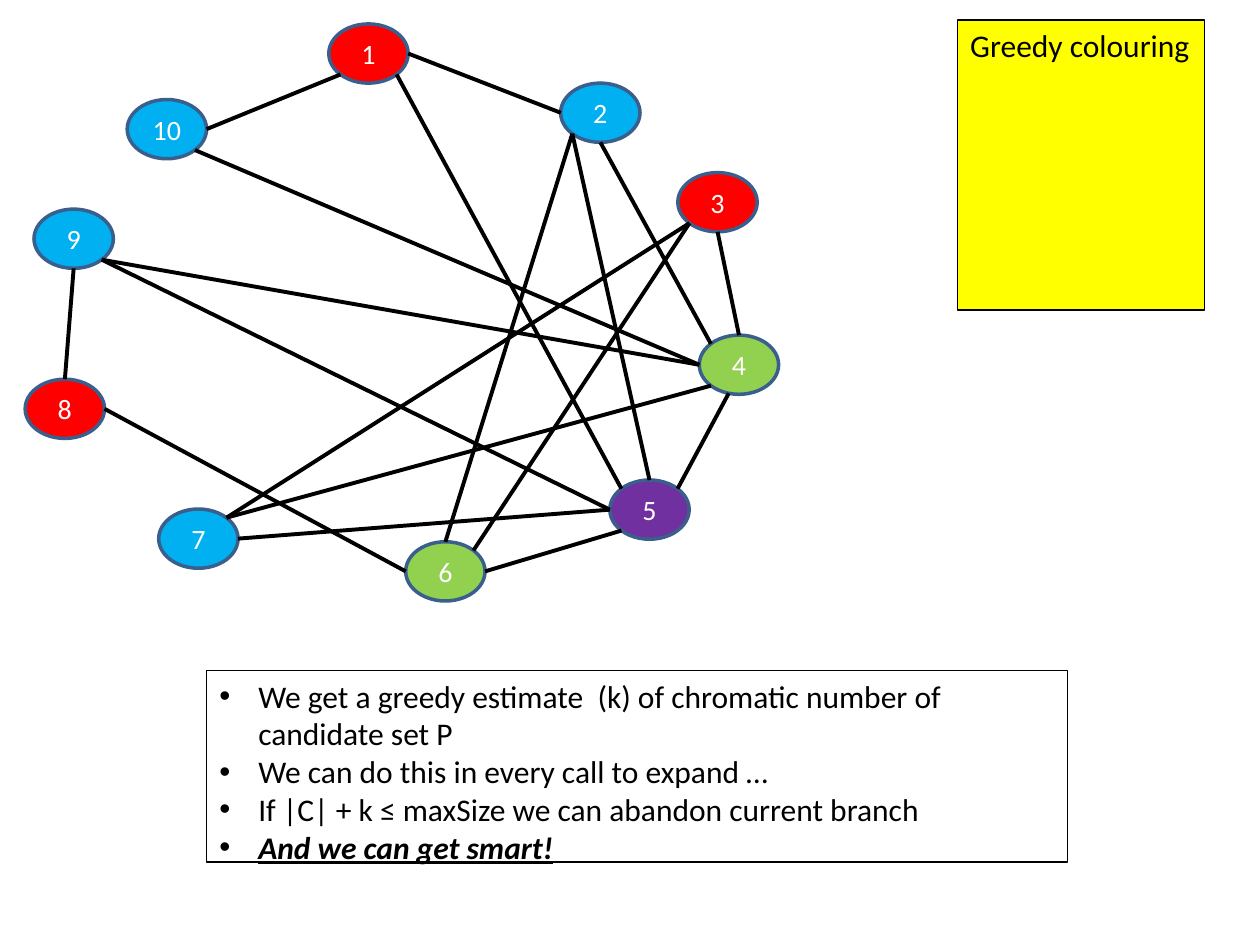
"""Build the greedy colouring slide: a coloured graph and its notes."""
from math import cos, radians, sin

from lxml import etree
from pptx import Presentation
from pptx.dml.color import RGBColor
from pptx.enum.shapes import MSO_CONNECTOR, MSO_SHAPE
from pptx.enum.text import MSO_ANCHOR, MSO_AUTO_SIZE, PP_ALIGN
from pptx.oxml.ns import qn
from pptx.util import Inches, Pt

OVAL = MSO_SHAPE.OVAL
STRAIGHT = MSO_CONNECTOR.STRAIGHT
TOP, MIDDLE = MSO_ANCHOR.TOP, MSO_ANCHOR.MIDDLE
LEFT, CENTER = PP_ALIGN.LEFT, PP_ALIGN.CENTER
FIT_SHAPE = MSO_AUTO_SIZE.SHAPE_TO_FIT_TEXT

RED, BLUE, GREEN, PURPLE = "FF0000", "00B0F0", "92D050", "7030A0"
BLACK, WHITE, YELLOW, OUTLINE = "000000", "FFFFFF", "FFFF00", "3A5F8C"
NODE_WIDTH, NODE_HEIGHT = 0.63, 0.47

NODES = {
    1: (2.61, 0.19, RED),
    2: (4.45, 0.66, BLUE),
    3: (5.38, 1.37, RED),
    4: (5.55, 2.66, GREEN),
    5: (4.84, 3.81, PURPLE),
    6: (3.22, 4.3, GREEN),
    7: (1.26, 4.04, BLUE),
    8: (0.2, 3.01, RED),
    9: (0.27, 1.66, BLUE),
    10: (1.01, 0.79, BLUE),
}

ANGLES = {"E": 0, "SE": 45, "S": 90, "SSW": 105, "SW": 135,
          "W": 180, "NW": 225, "N": 270, "NE": 315}

EDGES = [
    (1, "E", 2, "W"), (1, "SE", 5, "NW"), (10, "E", 1, "SW"),
    (2, "S", 4, "NW"), (8, "N", 9, "S"), (5, "N", 2, "SW"),
    (2, "SW", 6, "N"), (4, "N", 3, "S"), (3, "SW", 6, "NE"),
    (3, "SW", 7, "NE"), (5, "NE", 4, "SSW"), (7, "NE", 4, "SW"),
    (9, "SE", 4, "W"), (10, "SE", 4, "W"), (6, "E", 5, "SW"),
    (7, "E", 5, "W"), (9, "SE", 5, "W"), (6, "W", 8, "E"),
]

NOTES = [
    ("We get a greedy estimate  (k) of chromatic number of candidate set P", {}),
    ("We can do this in every call to expand …", {}),
    ("If |C| + k ≤ maxSize we can abandon current branch", {}),
    ("And we can get smart!", {"bold": True, "italic": True, "underline": True}),
]


def color(value):
    return RGBColor.from_string(value)


def write(para, text, size=18, fill=BLACK, align=LEFT, **emphasis):
    para.alignment = align
    para.space_before = Pt(0)
    span = para.add_run()
    span.text = text
    span.font.name = "Calibri"
    span.font.size = Pt(size)
    span.font.color.rgb = color(fill)
    for name, value in emphasis.items():
        setattr(span.font, name, value)


def edge_point(number, side):
    left, top, _ = NODES[number]
    angle = radians(ANGLES[side])
    return (Inches(left + NODE_WIDTH / 2 * (1 + cos(angle))),
            Inches(top + NODE_HEIGHT / 2 * (1 + sin(angle))))


class GraphSlide:
    """Hold the page and draw its elements in one style."""

    def __init__(self, deck):
        self.page = deck.slides.add_slide(deck.slide_layouts[1])

    def stroke(self, line, value, width):
        line.color.rgb = color(value)
        line.width = Pt(width)

    def node(self, number):
        left, top, fill = NODES[number]
        shape = self.page.shapes.add_shape(
            OVAL, Inches(left), Inches(top), Inches(NODE_WIDTH), Inches(NODE_HEIGHT))
        shape.shadow.inherit = False
        shape.fill.solid()
        shape.fill.fore_color.rgb = color(fill)
        self.stroke(shape.line, OUTLINE, 2)
        shape.text_frame.vertical_anchor = MIDDLE
        write(shape.text_frame.paragraphs[0], str(number),
              size=16, fill=WHITE, align=CENTER)

    def edge(self, start, start_side, end, end_side):
        line = self.page.shapes.add_connector(
            STRAIGHT, *edge_point(start, start_side), *edge_point(end, end_side))
        self.stroke(line.line, BLACK, 2.25)
        etree.SubElement(line._element.spPr, qn("a:effectLst"))

    def frame(self, box, left, top, width, height, wrap):
        box.left, box.top = Inches(left), Inches(top)
        box.width, box.height = Inches(width), Inches(height)
        self.stroke(box.line, BLACK, 0.75)
        box.text_frame.word_wrap = wrap
        box.text_frame.auto_size = FIT_SHAPE
        box.text_frame.vertical_anchor = TOP

    def title(self, text):
        box = self.page.shapes.title
        self.frame(box, 7.6, 0.16, 1.96, 0.4, wrap=False)
        box.fill.solid()
        box.fill.fore_color.rgb = color(YELLOW)
        write(box.text_frame.paragraphs[0], text)

    def notes(self, items):
        box = self.page.placeholders[1]
        self.frame(box, 1.64, 5.32, 6.83, 1.62, wrap=True)
        for index, (text, emphasis) in enumerate(items):
            frame = box.text_frame
            para = frame.add_paragraph() if index else frame.paragraphs[0]
            write(para, text, **emphasis)
            settings = para._p.get_or_add_pPr()
            settings.set("marL", str(Inches(0.31)))
            settings.set("indent", str(-Inches(0.31)))
            etree.SubElement(settings, qn("a:buFont")).set("typeface", "Arial")
            etree.SubElement(settings, qn("a:buChar")).set("char", "•")


def main():
    deck = Presentation()
    deck.slide_width, deck.slide_height = Inches(10), Inches(7.5)
    slide = GraphSlide(deck)
    for number in NODES:
        slide.node(number)
    for edge in EDGES:
        slide.edge(*edge)
    slide.notes(NOTES)
    slide.title("Greedy colouring")
    deck.save("out.pptx")


if __name__ == "__main__":
    main()
